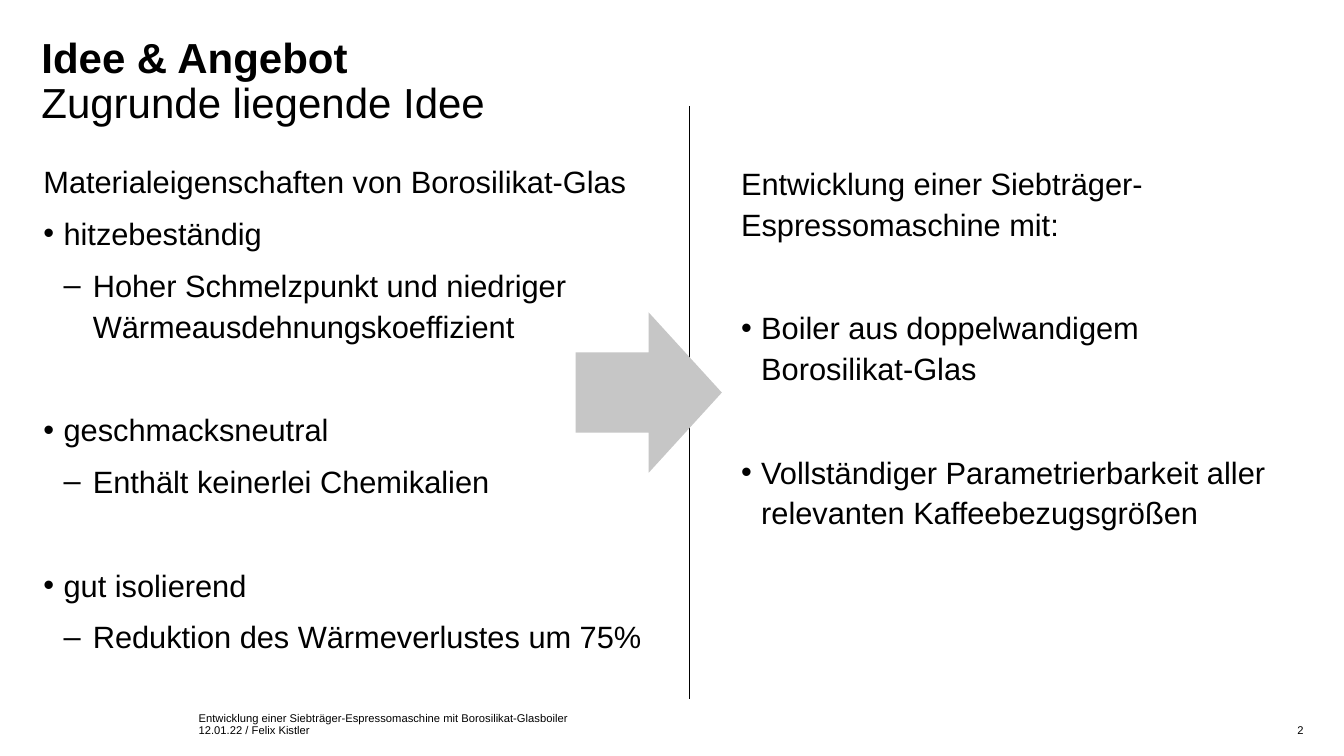
from pptx import Presentation
from pptx.dml.color import RGBColor
from pptx.enum.shapes import MSO_CONNECTOR, MSO_SHAPE
from pptx.enum.text import MSO_ANCHOR, MSO_AUTO_SIZE, PP_ALIGN
from pptx.oxml.ns import qn
from pptx.util import Inches, Pt
from lxml import etree

TOP, LOW = MSO_ANCHOR.TOP, MSO_ANCHOR.BOTTOM
LEFT, RIGHT = PP_ALIGN.LEFT, PP_ALIGN.RIGHT
FIXED = MSO_AUTO_SIZE.NONE
LINE, ARROW = MSO_CONNECTOR.STRAIGHT, MSO_SHAPE.RIGHT_ARROW

THEME = {
    "font": "Arial",
    "ink": RGBColor(0, 0, 0),
    "arrow": RGBColor(0xC6, 0xC6, 0xC6),
    "title": 30, "body": 22, "foot": 8,
}
# Per list level: left margin, first-line indent, bullet
LEVELS = {
    "head": (0, 0, None),
    "item": (0.2, -0.2, "•"),
    "sub": (0.49, -0.29, "‒"),
}
GAP = 37  # points of extra space above a new group

deck = Presentation()
deck.slide_width, deck.slide_height = Inches(13.33), Inches(7.5)
slide = deck.slides.add_slide(deck.slide_layouts[3])
shapes = slide.shapes


def area(x, y, w, h):
    """Turn percentages of the slide into left, top, width, height."""
    wide, high = deck.slide_width / 100, deck.slide_height / 100
    return int(x * wide), int(y * high), int(w * wide), int(h * high)


def write(box, rows, size, spot, anchor=TOP, align=LEFT, line=1.0, after=0):
    """Fill a box with rows of (level, text, space before, bold)."""
    box.left, box.top, box.width, box.height = area(*spot)
    frame = box.text_frame
    frame.word_wrap, frame.auto_size = True, FIXED
    frame.vertical_anchor = anchor
    frame.margin_left = frame.margin_right = 0
    frame.margin_top = frame.margin_bottom = 0
    for i, (level, text, before, bold) in enumerate(rows):
        para = frame.add_paragraph() if i else frame.paragraphs[0]
        margin, indent, mark = LEVELS[level]
        para.level = 1 if level == "sub" else 0
        props = para._p.get_or_add_pPr()
        props.set("marL", str(Inches(margin)))
        props.set("indent", str(Inches(indent)))
        if mark:
            etree.SubElement(props, qn("a:buFont"), typeface=THEME["font"])
            etree.SubElement(props, qn("a:buChar"), char=mark)
        else:
            etree.SubElement(props, qn("a:buNone"))
        para.alignment, para.line_spacing = align, line
        para.space_before, para.space_after = Pt(before), Pt(after)
        for j, part in enumerate(text.split("\n")):
            if j:
                para.add_line_break()
            run = para.add_run()
            run.text = part
            run.font.name, run.font.size = THEME["font"], Pt(size)
            run.font.bold = bold and j == 0
            run.font.color.rgb = THEME["ink"]


# Title, first line bold
write(shapes.title, [("head", "Idee & Angebot\nZugrunde liegende Idee", 0, True)],
      THEME["title"], (3.08, 4.93, 93.92, 13.07), line=0.9)

# Two columns of text
columns = [
    (1, (3.23, 21.07, 44.86, 68), [
        ("head", "Materialeigenschaften von Borosilikat-Glas", 0, False),
        ("item", "hitzebeständig", 0, False),
        ("sub", "Hoher Schmelzpunkt und niedriger Wärmeausdehnungskoeffizient", 0, False),
        ("item", "geschmacksneutral", GAP, False),
        ("sub", "Enthält keinerlei Chemikalien", 0, False),
        ("item", "gut isolierend", GAP, False),
        ("sub", "Reduktion des Wärmeverlustes um 75%", 0, False),
    ]),
    (2, (55.14, 21.33, 39.68, 68), [
        ("head", "Entwicklung einer Siebträger-Espressomaschine mit:", 0, False),
        ("item", "Boiler aus doppelwandigem Borosilikat-Glas", GAP, False),
        ("item", "Vollständiger Parametrierbarkeit aller relevanten Kaffeebezugsgrößen",
         GAP, False),
    ]),
]
for slot, spot, rows in columns:
    write(slide.placeholders[slot], rows, THEME["body"], spot, line=1.1, after=8)

# Footer
notes = [
    ("Entwicklung einer Siebträger-Espressomaschine mit Borosilikat-Glasboiler",
     (14.78, 92.53, 32.26, 3.33), LOW, LEFT),
    ("12.01.22 / Felix Kistler", (14.78, 95.73, 32.26, 3.2), TOP, LEFT),
    ("2", (86.5, 95.73, 10.5, 3.2), TOP, RIGHT),
]
for text, spot, anchor, align in notes:
    write(shapes.add_textbox(*area(*spot)), [("head", text, 0, False)],
          THEME["foot"], spot, anchor=anchor, align=align)

# Divider between the columns
x, y, w, h = area(51.31, 14, 0, 78.53)
rule = shapes.add_connector(LINE, x, y, x + w, y + h)
rule.line.color.rgb, rule.line.width = THEME["ink"], Pt(0.5)
etree.SubElement(rule._element.spPr, qn("a:effectLst"))

# Arrow from properties to product
arrow = shapes.add_shape(ARROW, *area(42.83, 41.33, 10.88, 21.2))
arrow.shadow.inherit = False
arrow.fill.solid()
arrow.fill.fore_color.rgb = THEME["arrow"]
arrow.line.fill.background()

deck.save("out.pptx")
